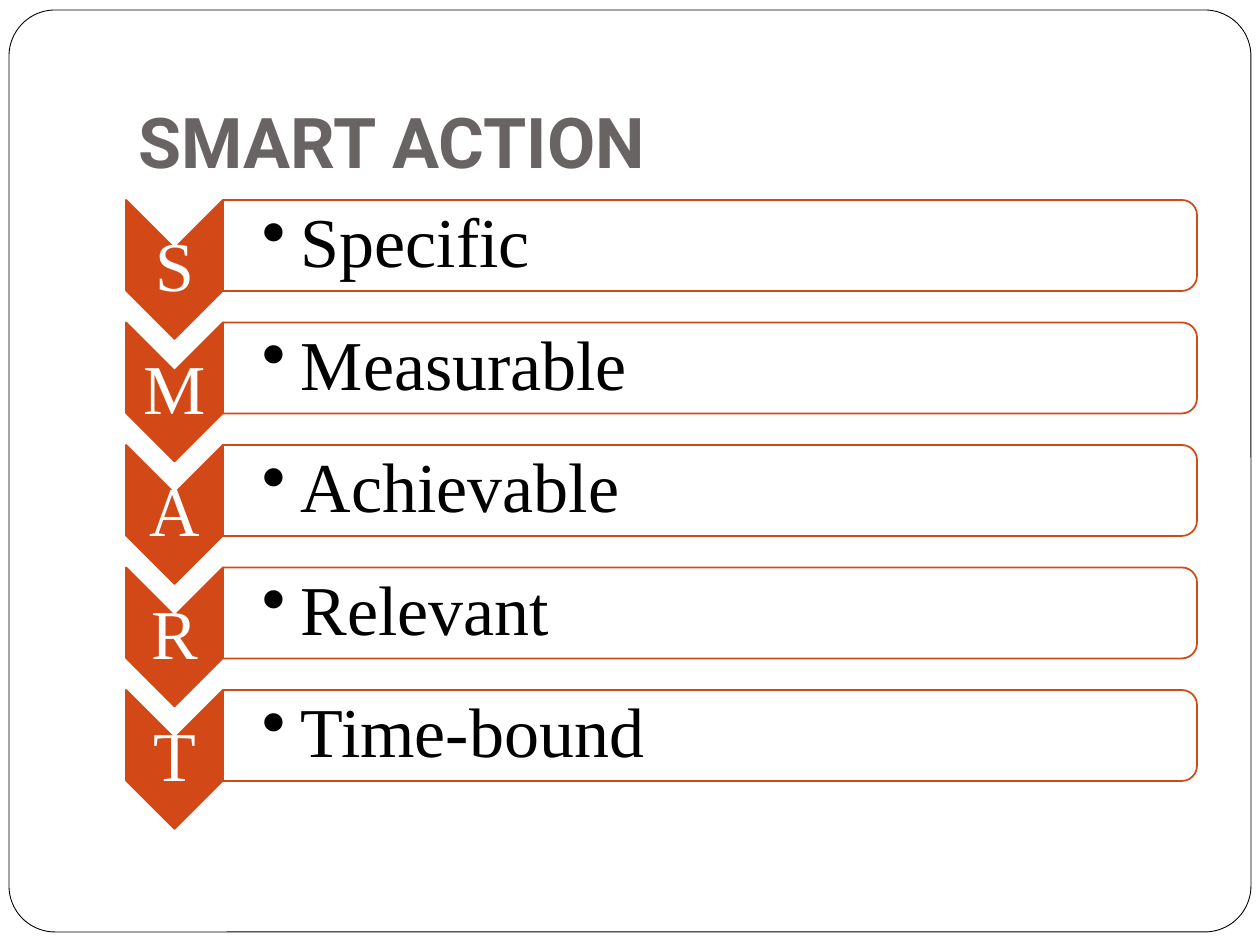
"""Build the SMART ACTION slide: five lettered chevrons beside bulleted panels."""
from lxml import etree
from pptx import Presentation
from pptx.dml.color import RGBColor
from pptx.enum.shapes import MSO_SHAPE
from pptx.enum.text import MSO_ANCHOR, MSO_AUTO_SIZE, PP_ALIGN
from pptx.oxml.ns import qn
from pptx.util import Emu, Pt

ROUNDED = MSO_SHAPE.ROUNDED_RECTANGLE
CHEVRON = MSO_SHAPE.CHEVRON
PANEL = MSO_SHAPE.ROUND_2_SAME_RECTANGLE
MIDDLE, BOTTOM = MSO_ANCHOR.MIDDLE, MSO_ANCHOR.BOTTOM
LEFT, CENTER = PP_ALIGN.LEFT, PP_ALIGN.CENTER
NO_FIT = MSO_AUTO_SIZE.NONE

TITLE = "SMART ACTION"
GOALS = [
    ("S", "Specific"),
    ("M", "Measurable"),
    ("A", "Achievable"),
    ("R", "Relevant"),
    ("T", "Time-bound"),
]
ORANGE, WHITE, BLACK, GREY = "D34817", "FFFFFF", "000000", "696464"
SERIF, SANS = "Times New Roman", "Roboto"
TEXT_SIZE = 40

FIRST_TOP, LAST_TOP = 200, 690
CHEVRON_LEFT, CHEVRON_WIDTH, CHEVRON_HEIGHT = 126, 97, 139
PANEL_LEFT, PANEL_WIDTH, PANEL_HEIGHT = 223, 974, 91
INSET, INDENT = 4, 39


def px(length):
    return Emu(round(length * 914400 / 126))


def color(value):
    return RGBColor.from_string(value)


def add_outline(slide, kind, box, fill, line, weight, turned=False):
    left, top, width, height = box
    if turned:
        left, top = left + (width - height) / 2, top + (height - width) / 2
        width, height = height, width
    outline = slide.shapes.add_shape(kind, *map(px, (left, top, width, height)))
    outline.rotation = 90 if turned else 0
    outline.shadow.inherit = False
    outline.fill.solid()
    outline.fill.fore_color.rgb = color(fill)
    outline.line.color.rgb = color(line)
    outline.line.width = Pt(weight)
    return outline


def write(holder, text, font, ink, anchor, align, insets, bold=False):
    frame = holder.text_frame
    frame.word_wrap = True
    frame.auto_size = NO_FIT
    frame.vertical_anchor = anchor
    (frame.margin_left, frame.margin_top,
     frame.margin_right, frame.margin_bottom) = map(px, insets)
    paragraph = frame.paragraphs[0]
    paragraph.alignment = align
    run = paragraph.add_run()
    run.text = text
    run.font.name = font
    run.font.size = Pt(TEXT_SIZE)
    run.font.bold = bold
    run.font.color.rgb = color(ink)
    return paragraph


def add_label(slide, box, text, ink, align, left_inset):
    label = slide.shapes.add_textbox(*map(px, box))
    insets = (left_inset, INSET, INSET, INSET)
    paragraph = write(label, text, SERIF, ink, MIDDLE, align, insets)
    paragraph.line_spacing = 0.9
    return paragraph


def add_bullet(paragraph):
    properties = paragraph._p.get_or_add_pPr()
    properties.set("marL", str(px(INDENT)))
    properties.set("indent", str(-px(INDENT)))
    etree.SubElement(properties, qn("a:buChar"), char="•")


def add_goal(slide, top, letter, goal):
    add_outline(slide, CHEVRON, (CHEVRON_LEFT, top, CHEVRON_WIDTH, CHEVRON_HEIGHT),
                ORANGE, ORANGE, 1, turned=True)
    add_label(slide, (CHEVRON_LEFT, top + 48, CHEVRON_WIDTH, 42),
              letter, WHITE, CENTER, INSET)
    panel = add_outline(slide, PANEL, (PANEL_LEFT, top, PANEL_WIDTH, PANEL_HEIGHT),
                        WHITE, ORANGE, 1, turned=True)
    tint = panel._element.spPr.find(qn("a:solidFill"))[0]
    etree.SubElement(tint, qn("a:alpha"), val="90000")
    add_bullet(add_label(slide, (PANEL_LEFT, top + 4, PANEL_WIDTH - 5, 82),
                         goal, BLACK, LEFT, INDENT))


def main():
    deck = Presentation()
    deck.slide_width, deck.slide_height = px(1260), px(945)
    slide = deck.slides.add_slide(deck.slide_layouts[5])

    title = slide.shapes.title
    title.left, title.top, title.width, title.height = map(px, (126, 38, 1071, 158))
    write(title, TITLE, SANS, GREY, BOTTOM, LEFT, (13, 6, 13, 13), bold=True)

    border = add_outline(slide, ROUNDED, (9, 10, 1242, 922), WHITE, BLACK, 0.5)
    border.adjustments[0] = 0.05
    title._element.addprevious(border._element)

    step = (LAST_TOP - FIRST_TOP) / (len(GOALS) - 1)
    for row, (letter, goal) in enumerate(GOALS):
        add_goal(slide, FIRST_TOP + row * step, letter, goal)

    deck.save("out.pptx")


if __name__ == "__main__":
    main()
